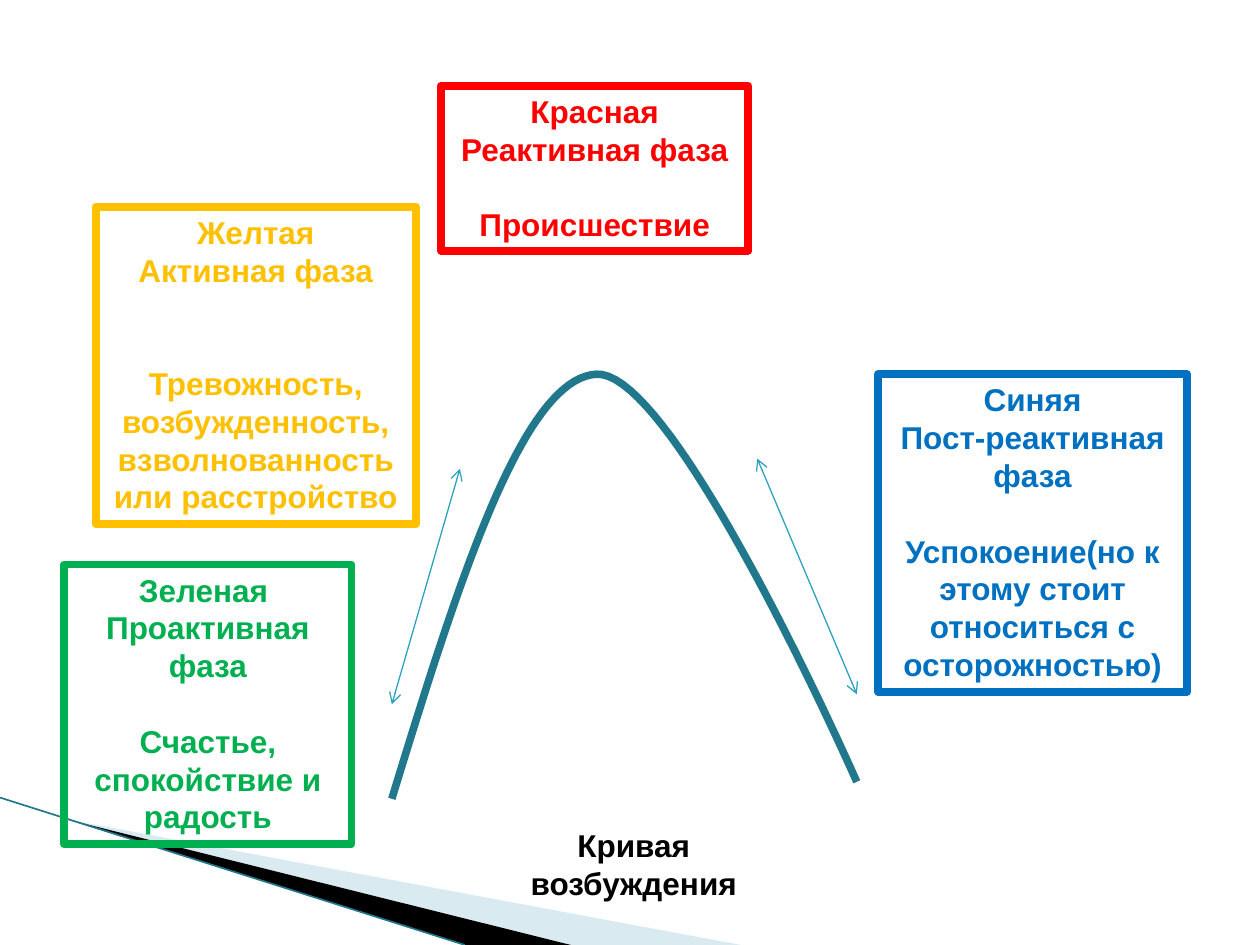
from lxml.etree import SubElement
from pptx import Presentation
from pptx.dml.color import RGBColor
from pptx.enum.shapes import MSO_CONNECTOR as Connector, MSO_SHAPE as Shape
from pptx.enum.text import MSO_ANCHOR as Anchor, PP_ALIGN as Align
from pptx.oxml.ns import qn
from pptx.util import Inches, Pt

COLUMNS, ROWS = 100, 75
WIDTH, HEIGHT = Inches(10), Inches(7.5)
TEXT_SIZE, BLANK_LINE = 18, 21.6

YELLOW = RGBColor(0xFF, 0xC0, 0x00)
GREEN = RGBColor(0x00, 0xB0, 0x50)
RED = RGBColor(0xFF, 0x00, 0x00)
BLUE = RGBColor(0x00, 0x70, 0xC0)
BLACK = RGBColor(0x00, 0x00, 0x00)
TEAL = RGBColor(0x21, 0x78, 0x8D)
CYAN = RGBColor(0x2D, 0xA2, 0xBF)
PALE = RGBColor(0xA0, 0xCB, 0xDC)

PHASES = [
    ((7.6, 16.4, 25.4, 25.2), YELLOW, 2,
     ["Желтая", "Активная фаза", "Тревожность, возбужденность, взволнованность или расстройство"]),
    ((5.1, 44.8, 22.8, 22.2), GREEN, 1,
     ["Зеленая ", "Проактивная фаза", "Счастье, спокойствие и радость"]),
    ((35, 6.8, 24.4, 13.1), RED, 1,
     ["Красная", "Реактивная фаза", "Происшествие"]),
    ((69.7, 29.7, 24.5, 25.2), BLUE, 1,
     ["Синяя", "Пост-реактивная фаза", "Успокоение(но к этому стоит относиться с осторожностью)"]),
]
CURVE_SEGMENTS = [
    [(0, 1), (0.14, 0.5), (0.28, 0.01), (0.44, 0)],
    [(0.44, 0), (0.61, -0.01), (1, 0.96), (1, 0.96)],
]


def place(column, row):
    """Turn a grid position into slide lengths."""
    return round(column * WIDTH / COLUMNS), round(row * HEIGHT / ROWS)


def add_outline(slide, points, close):
    """Draw a freeform through grid points."""
    start, *others = [place(*point) for point in points]
    builder = slide.shapes.build_freeform(*start)
    builder.add_line_segments(others, close=close)
    shape = builder.convert_to_shape()
    shape.shadow.inherit = False
    return shape


def add_wedge(slide, points, color, opacity=100):
    """Draw a filled corner wedge."""
    shape = add_outline(slide, points, True)
    shape.fill.solid()
    shape.fill.fore_color.rgb = color
    shape.line.fill.background()
    color_node = shape.fill._xPr.find(qn("a:solidFill"))[0]
    SubElement(color_node, qn("a:alpha"), val=str(opacity * 1000))


def add_straight(slide, start, end, color, width, arrows=False):
    """Draw a straight line, with open arrowheads at both ends on request."""
    line = slide.shapes.add_connector(Connector.STRAIGHT, *place(*start), *place(*end))
    line.line.color.rgb = color
    line.line.width = Pt(width)
    if arrows:
        for end_tag in ("a:headEnd", "a:tailEnd"):
            SubElement(line.line._get_or_add_ln(), qn(end_tag), type="arrow")
    SubElement(line._element.spPr, qn("a:effectLst"))


def write_text(shape, lines, color, gaps):
    """Write centred bold lines, with the last one set apart by a gap."""
    frame = shape.text_frame
    frame.word_wrap = True
    frame.vertical_anchor = Anchor.TOP
    frame.text = "\n".join(lines)
    for paragraph in frame.paragraphs:
        paragraph.alignment = Align.CENTER
        font = paragraph.runs[0].font
        font.name, font.size, font.bold = "Arial", Pt(TEXT_SIZE), True
        font.color.rgb = color
    if gaps:
        frame.paragraphs[-1].space_before = Pt(gaps * BLANK_LINE)


def add_phase(slide, box, color, gaps, lines):
    """Draw one framed phase card."""
    shape = slide.shapes.add_shape(Shape.RECTANGLE, *place(*box[:2]), *place(*box[2:]))
    shape.shadow.inherit = False
    shape.fill.background()
    shape.line.color.rgb = color
    shape.line.width = Pt(4.5)
    write_text(shape, lines, color, gaps)


def add_corner(slide, box):
    """Draw the wedges and the line in the lower left corner."""
    left, top, width, height = box
    tip, bottom = (left + 0.09 * width, top + 0.15 * height), top + height
    outer, middle, inner = [left + share * width for share in (0.98, 0.755, 0.615)]
    add_wedge(slide, [tip, (outer, bottom), (middle, bottom)], PALE, 40)
    add_wedge(slide, [tip, (middle, bottom), (inner, bottom)], BLACK)
    add_straight(slide, (left, top), (inner, bottom), TEAL, 0.95)


def bezier(points, share):
    """Find the point at a share of a cubic curve."""
    weights = [(1 - share) ** 3, 3 * share * (1 - share) ** 2,
               3 * share ** 2 * (1 - share), share ** 3]
    return [sum(w * p[axis] for w, p in zip(weights, points)) for axis in (0, 1)]


def add_curve(slide, box, steps=40):
    """Draw the arousal curve, its two arrows and its caption."""
    left, top, width, height = box
    shares = [bezier(segment, step / steps)
              for segment in CURVE_SEGMENTS for step in range(steps + 1)]
    points = [(left + x * width, top + y * height) for x, y in shares]
    curve = add_outline(slide, points, False)
    curve.fill.background()
    curve.line.color.rgb = TEAL
    curve.line.width = Pt(4.33)
    right = left + width
    add_straight(slide, (left, top + 26.2), (left + 5.4, top + 7.5), CYAN, 0.75, True)
    add_straight(slide, (right - 7.9, top + 6.7), (right, top + 25.4), CYAN, 0.75, True)
    caption = slide.shapes.add_textbox(*place(left + 5.4, top + 35.4), *place(27.6, 7.1))
    write_text(caption, ["Кривая возбуждения"], BLACK, 0)


def main():
    """Build and save the slide."""
    presentation = Presentation()
    presentation.slide_width, presentation.slide_height = WIDTH, HEIGHT
    slide = presentation.slides.add_slide(presentation.slide_layouts[6])
    add_corner(slide, (0, 63.3, 60, 11.7))
    add_curve(slide, (31.1, 29.7, 36.9, 33.7))
    for phase in PHASES:
        add_phase(slide, *phase)
    presentation.save("out.pptx")


if __name__ == "__main__":
    main()
